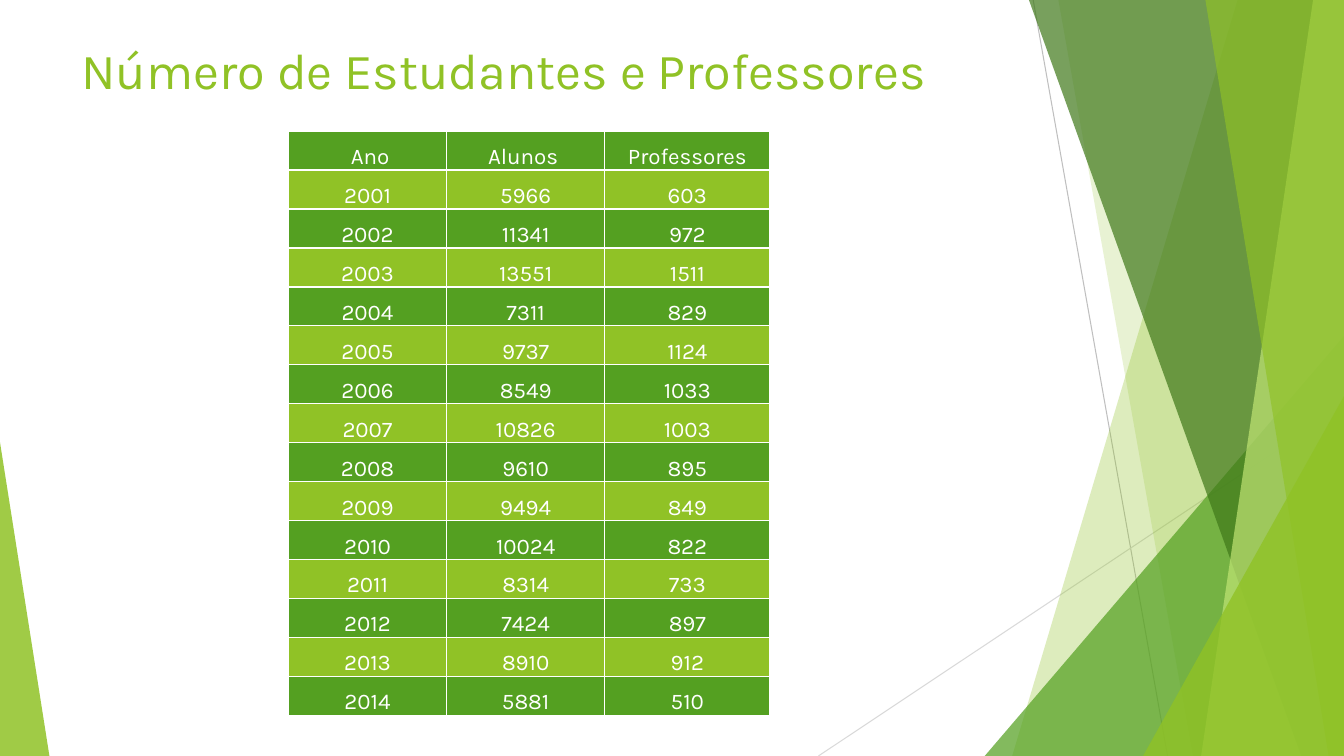
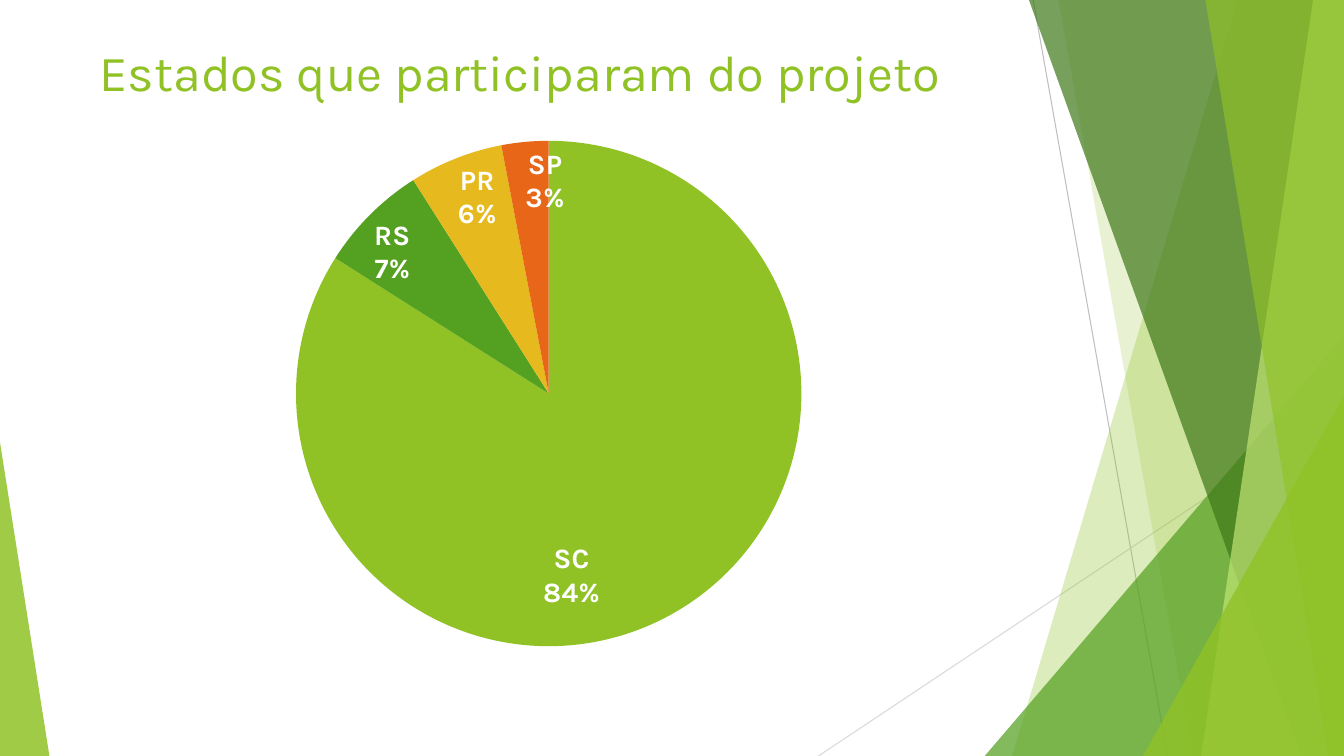
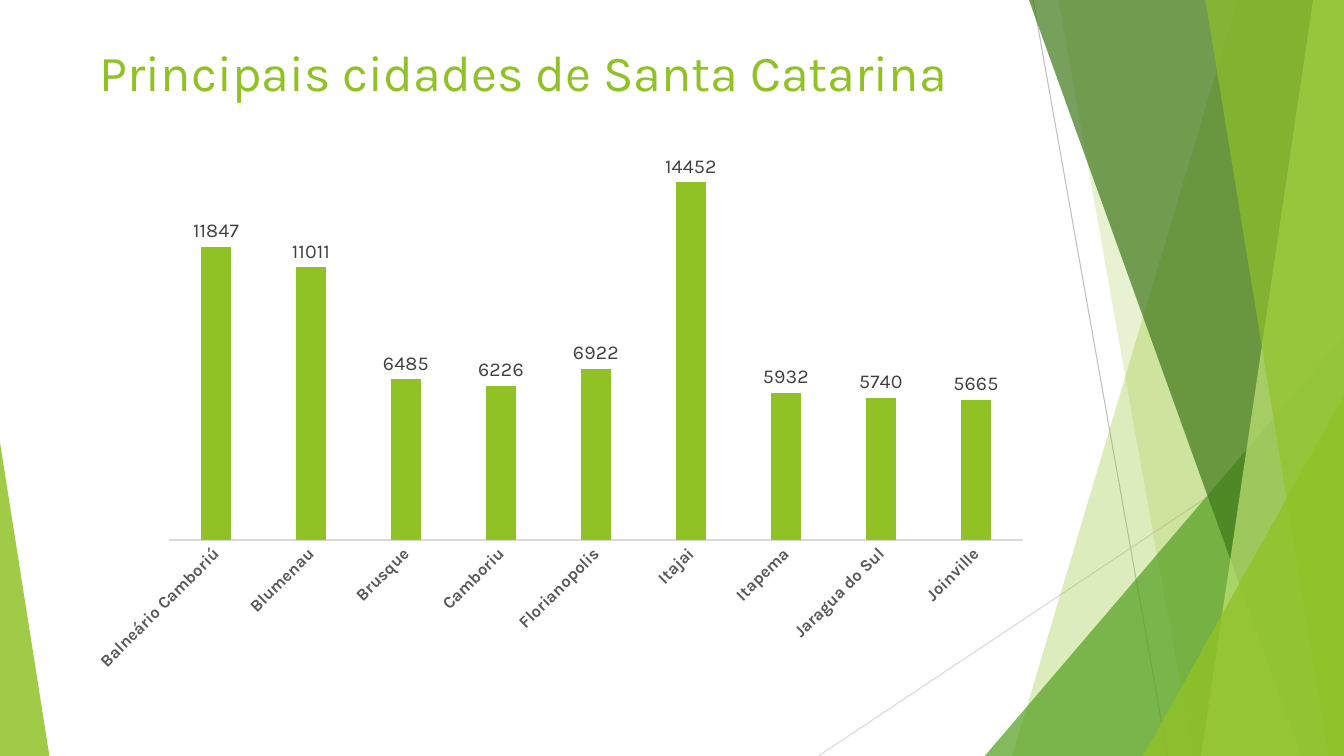
from collections import namedtuple
from copy import deepcopy

from lxml.etree import SubElement
from pptx import Presentation
from pptx.chart.data import CategoryChartData
from pptx.dml.color import RGBColor
from pptx.enum.chart import XL_CHART_TYPE as ChartType
from pptx.enum.chart import XL_LABEL_POSITION as LabelPosition
from pptx.enum.chart import XL_TICK_MARK as TickMark
from pptx.enum.shapes import MSO_CONNECTOR as Connector
from pptx.enum.shapes import MSO_SHAPE as Shape
from pptx.enum.text import MSO_ANCHOR as Anchor
from pptx.enum.text import MSO_AUTO_SIZE as AutoSize
from pptx.enum.text import PP_ALIGN as Align
from pptx.oxml import parse_xml
from pptx.oxml.ns import nsdecls, qn
from pptx.util import Pt

Box = namedtuple("Box", "left top width height")

WIDTH, HEIGHT = 960, 540
FONT = "Karla"
COLORS = {
    "lime": "90C226",
    "green": "54A021",
    "forest": "3F7819",
    "pale": "C0E474",
    "yellow": "E6B91E",
    "orange": "E76618",
    "white": "FFFFFF",
    "black": "000000",
    "label": "404040",
    "axis_text": "595959",
    "gray": "BFBFBF",
    "light_gray": "D9D9D9",
}

STUDENTS = [
    ("\u00a0Ano".replace("\u00a0", " "), "Alunos ", "Professores"),
    (2001, 5966, 603),
    (2002, 11341, 972),
    (2003, 13551, 1511),
    (2004, 7311, 829),
    (2005, 9737, 1124),
    (2006, 8549, 1033),
    (2007, 10826, 1003),
    (2008, 9610, 895),
    (2009, 9494, 849),
    (2010, 10024, 822),
    (2011, 8314, 733),
    (2012, 7424, 897),
    (2013, 8910, 912),
    (2014, 5881, 510),
]
STATES = {"SC": 84, "RS": 7, "PR": 6, "SP": 3}
CITIES = {
    "Balneário Camboriú": 11847,
    "Blumenau": 11011,
    "Brusque": 6485,
    "Camboriu": 6226,
    "Florianopolis": 6922,
    "Itajai": 14452,
    "Itapema": 5932,
    "Jaragua do Sul": 5740,
    "Joinville": 5665,
}


def rgb(name):
    return RGBColor.from_string(COLORS[name])


def points(box):
    return [Pt(length) for length in box]


def style_font(font, size, color, bold=False):
    font.name, font.size, font.bold = FONT, Pt(size), bold
    font.color.rgb = rgb(color)


# Background facets, kept in the layout
def add_ray(slide, start, end, color):
    ray = slide.shapes.add_connector(Connector.STRAIGHT, *points(start + end))
    ray.line.color.rgb = rgb(color)
    ray.line.width = Pt(0.75)
    SubElement(ray.element.spPr, qn("a:effectLst"))


def fill_facet(shape, color, opacity):
    shape.shadow.inherit = False
    shape.line.fill.background()
    shape.fill.solid()
    shape.fill.fore_color.rgb = rgb(color)
    color_element = shape.element.spPr.find(qn("a:solidFill"))[0]
    SubElement(color_element, qn("a:alpha"), val=str(opacity * 1000))


def add_band(slide, top_x, bottom_x, color, opacity):
    """Fill from a slanted edge to the right side of the slide."""
    builder = slide.shapes.build_freeform(Pt(top_x), 0)
    corners = [(WIDTH, 0), (WIDTH, HEIGHT), (bottom_x, HEIGHT)]
    builder.add_line_segments([points(corner) for corner in corners])
    fill_facet(builder.convert_to_shape(), color, opacity)


def add_corner(slide, left, top, width, apex, color, opacity):
    """Place a triangle on the bottom edge; apex is 0 (left) or 1 (right)."""
    box = Box(left, top, width, HEIGHT - top)
    shape = slide.shapes.add_shape(Shape.ISOSCELES_TRIANGLE, *points(box))
    shape.adjustments[0] = apex
    fill_facet(shape, color, opacity)


def move_facets_to_layout(slide, layout):
    add_ray(slide, (738, 0), (834, HEIGHT), "gray")
    add_ray(slide, (WIDTH, 290), (584.6, HEIGHT), "light_gray")
    add_band(slide, 884, 723, "lime", 30)
    add_band(slide, 756, 852, "lime", 20)
    add_corner(slide, 703.4, 240, 256.6, 1, "green", 72)
    add_band(slide, 735, 929.5, "forest", 70)
    add_band(slide, 938, 858, "pale", 70)
    add_band(slide, 861, 949, "lime", 65)
    add_corner(slide, 816.5, 283, 143.5, 1, "lime", 80)
    add_corner(slide, 0, 316, 35.3, 0, "lime", 85)
    facets = [shape for shape in slide.shapes if not shape.is_placeholder]
    for index, shape in enumerate(facets, start=2):
        layout.shapes.element.insert(index, shape.element)


# Title
def set_title(slide, text, left, top):
    title = slide.shapes.title
    title.left, title.top, title.width, title.height = points(
        Box(left, top, 676.8, 103.7))
    frame = title.text_frame
    frame.text = text
    frame.word_wrap = True
    frame.auto_size = AutoSize.NONE
    frame.vertical_anchor = Anchor.TOP
    paragraph = frame.paragraphs[0]
    paragraph.alignment = Align.LEFT
    style_font(paragraph.font, 36, "lime")


# Table
def add_borders(cell):
    properties = cell._tc.get_or_add_tcPr()
    for side in ("lnL", "lnR", "lnT", "lnB"):
        properties.append(parse_xml(
            f'<a:{side} {nsdecls("a")} w="{Pt(1)}"><a:solidFill>'
            f'<a:srgbClr val="{COLORS["white"]}"/></a:solidFill></a:{side}>'))


def fill_cell(cell, text, color):
    add_borders(cell)
    cell.fill.solid()
    cell.fill.fore_color.rgb = rgb(color)
    cell.margin_left = cell.margin_right = cell.margin_top = Pt(0.75)
    cell.margin_bottom = 0
    cell.vertical_anchor = Anchor.BOTTOM
    cell.text = str(text)
    paragraph = cell.text_frame.paragraphs[0]
    paragraph.alignment = Align.CENTER
    style_font(paragraph.font, 16, "white")


def add_striped_table(slide, box, rows, widths):
    frame = slide.shapes.add_table(len(rows), len(widths), *points(box))
    table = frame.table
    table.first_row = table.horz_banding = False
    for column, width in zip(table.columns, widths):
        column.width = Pt(width)
    for index, values in enumerate(rows):
        table.rows[index].height = Pt(box.height / len(rows))
        for column, value in enumerate(values):
            fill_cell(table.cell(index, column), value,
                      ("green", "lime")[index % 2])


# Charts
def add_plain_chart(slide, kind, box, values, plot_area):
    """Add a one-series chart; plot_area is given as shares of the box."""
    data = CategoryChartData()
    data.categories = list(values)
    data.add_series("Series 1", list(values.values()))
    chart = slide.shapes.add_chart(kind, *points(box), data).chart
    chart.has_title = chart.has_legend = False
    style_font(chart.font, 10, "black")
    area = chart._chartSpace.chart.plotArea
    for layout in area.findall(qn("c:layout")):
        area.remove(layout)
    area.insert(0, manual_layout(
        layoutTarget="inner", xMode="edge", yMode="edge",
        **dict(zip("xywh", plot_area))))
    return chart


def manual_layout(**settings):
    layout = parse_xml(f'<c:layout {nsdecls("c")}><c:manualLayout/></c:layout>')
    for name, value in settings.items():
        SubElement(layout[0], qn(f"c:{name}"), val=str(value))
    return layout


def move_label(labels, index, x, y):
    """Shift one data label by shares of the chart size."""
    group = labels._element
    label = parse_xml(f'<c:dLbl {nsdecls("c")}><c:idx val="{index}"/></c:dLbl>')
    label.append(manual_layout(x=x, y=y))
    for setting in group:
        if setting.tag != qn("c:showLeaderLines"):
            label.append(deepcopy(setting))
    group.insert(0, label)


def add_state_pie(slide, box):
    chart = add_plain_chart(slide, ChartType.PIE, box, STATES,
                            (0.2, 0.02, 0.6, 0.86))
    plot = chart.plots[0]
    plot.vary_by_categories = True
    series = plot.series[0]
    for index, color in enumerate(("lime", "green", "yellow", "orange")):
        fill = series.points[index].format.fill
        fill.solid()
        fill.fore_color.rgb = rgb(color)
    labels = series.data_labels
    style_font(labels.font, 20, "white", bold=True)
    labels.number_format = "0%"
    labels.number_format_is_linked = False
    labels.show_value = False
    labels.show_percentage = labels.show_category_name = True
    labels.position = LabelPosition.INSIDE_END
    separator = parse_xml(f'<c:separator {nsdecls("c")}>\n</c:separator>')
    labels._element.find(qn("c:showBubbleSize")).addnext(separator)
    move_label(labels, 0, -0.08, 0)


def add_city_columns(slide, box):
    chart = add_plain_chart(slide, ChartType.COLUMN_CLUSTERED, box, CITIES,
                            (0.1, 0.02, 0.88, 0.72))
    plot = chart.plots[0]
    plot.vary_by_categories = False
    plot.gap_width, plot.overlap = 219, -27
    series = plot.series[0]
    series.format.fill.solid()
    series.format.fill.fore_color.rgb = rgb("lime")
    labels = series.data_labels
    style_font(labels.font, 14, "label")
    labels.show_value = True
    labels.position = LabelPosition.OUTSIDE_END

    value_axis = chart.value_axis
    value_axis.visible = value_axis.has_major_gridlines = False
    value_axis.minimum_scale, value_axis.maximum_scale = 0, 16000

    city_axis = chart.category_axis
    city_axis.major_tick_mark = TickMark.NONE
    city_axis.format.line.color.rgb = rgb("light_gray")
    city_axis.format.line.width = Pt(0.75)
    style_font(city_axis.tick_labels.font, 12, "axis_text", bold=True)
    body = city_axis._element.find(qn("c:txPr")).find(qn("a:bodyPr"))
    body.set("rot", str(-45 * 60000))


def main():
    presentation = Presentation()
    presentation.slide_width, presentation.slide_height = Pt(WIDTH), Pt(HEIGHT)
    layout = presentation.slide_layouts[5]
    students, states, cities = [
        presentation.slides.add_slide(layout) for _ in range(3)]
    move_facets_to_layout(students, layout)

    set_title(students, "Número de Estudantes e Professores", 51, 24.5)
    add_striped_table(students, Box(206, 93.6, 344, 417.9), STUDENTS,
                      (113, 113, 118))

    set_title(states, "Estados que participaram do projeto", 64, 26)
    add_state_pie(states, Box(90.7, 92.2, 602.6, 419.8))

    set_title(cities, "Principais cidades de Santa Catarina", 64, 26)
    add_city_columns(cities, Box(51, 95, 694, 393))

    presentation.save("out.pptx")


if __name__ == "__main__":
    main()
